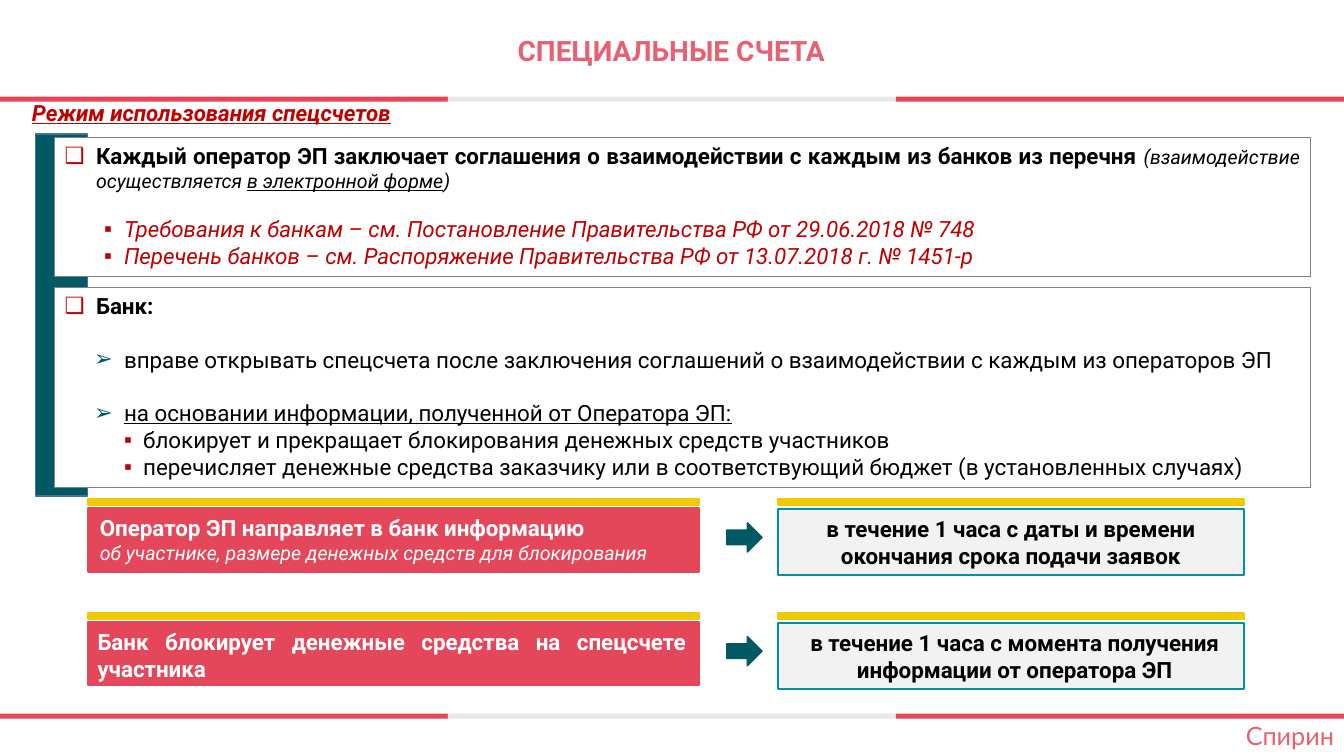
from lxml import etree
from pptx import Presentation
from pptx import util as u
from pptx.dml.color import RGBColor
from pptx.enum import shapes, text
from pptx.oxml import ns

RED = RGBColor(0xE4, 0x46, 0x5A)
ROSE = RGBColor(0xE8, 0x61, 0x72)
DARK_RED = RGBColor(0xC0, 0x00, 0x00)
TEAL = RGBColor(0x01, 0x5A, 0x63)
AQUA = RGBColor(0x02, 0x91, 0xA0)
BLUE = RGBColor(0x43, 0x73, 0x9E)
YELLOW = RGBColor(0xF1, 0xC9, 0x01)
GRAY = RGBColor(0x80, 0x80, 0x80)
SILVER = RGBColor(0xE9, 0xE8, 0xE9)
PALE = RGBColor(0xF2, 0xF2, 0xF2)
WHITE = RGBColor(0xFF, 0xFF, 0xFF)
BLACK = RGBColor(0x00, 0x00, 0x00)

ALIGN = text.PP_ALIGN
SHAPE = shapes.MSO_SHAPE


def write(para, words, size=16, color=BLACK, name="Roboto", bold=False, italic=False, underline=False):
    span = para.add_run()
    span.text = words
    font = span.font
    font.size, font.name = u.Pt(size), name
    font.bold, font.italic, font.underline = bold, italic, underline
    font.color.rgb = color


class Slide:
    def __init__(self, page):
        self.page = page

    def place(self, box, left, top, width, height):
        box.left, box.top = u.Pt(left), u.Pt(top)
        box.width, box.height = u.Pt(width), u.Pt(height)

    def paint(self, box, fill, line=None, weight=1):
        box.fill.solid()
        box.fill.fore_color.rgb = fill
        if line is None:
            box.line.fill.background()
        else:
            box.line.color.rgb = line
            box.line.width = u.Pt(weight)

    def shape(self, area, fill, line=None, weight=1, kind=SHAPE.RECTANGLE):
        box = self.page.shapes.add_shape(kind, *map(u.Pt, area))
        box.shadow.inherit = False
        self.paint(box, fill, line, weight)
        return box

    def fill_text(self, box, lines, align, insets=(7.2, 3.6, 7.2, 3.6), wrap=True):
        frame = box.text_frame
        frame.word_wrap = wrap
        frame.vertical_anchor = text.MSO_ANCHOR.TOP
        frame.margin_left, frame.margin_top, frame.margin_right, frame.margin_bottom = map(u.Pt, insets)
        for index, (words, style) in enumerate(lines):
            para = frame.add_paragraph() if index else frame.paragraphs[0]
            para.alignment = align
            write(para, words, **style)

    def label(self, area, words, align, **style):
        box = self.page.shapes.add_textbox(*map(u.Pt, area))
        self.fill_text(box, [(words, style)], align, wrap=False)

    def title(self, area, words, **style):
        box = self.page.shapes.title
        self.place(box, *area)
        para = box.text_frame.paragraphs[0]
        para.alignment, para.line_spacing = ALIGN.CENTER, 0.9
        write(para, words, **style)

    def bullet(self, para, mark, color, indent, hang):
        props = para._p.get_or_add_pPr()
        props.set("marL", str(u.Pt(indent)))
        props.set("indent", str(-u.Pt(hang)))
        tint = etree.SubElement(props, ns.qn("a:buClr"))
        etree.SubElement(tint, ns.qn("a:srgbClr"), val=str(color))
        etree.SubElement(props, ns.qn("a:buChar"), char=mark)

    def list(self, number, area, items):
        box = self.page.placeholders[number]
        self.page.shapes.element.append(box.element)
        self.place(box, *area)
        self.paint(box, WHITE, GRAY, 0.75)
        frame = box.text_frame
        frame.auto_size = text.MSO_AUTO_SIZE.NONE
        for index, (level, gap, spans) in enumerate(items):
            para = frame.add_paragraph() if index else frame.paragraphs[0]
            self.bullet(para, *level)
            para.alignment = ALIGN.JUSTIFY
            para.space_before, para.line_spacing = u.Pt(gap), 1.0
            for words, style in spans:
                write(para, words, **style)


def main():
    deck = Presentation()
    deck.slide_width, deck.slide_height = u.Pt(960), u.Pt(540)
    slide = Slide(deck.slides.add_slide(deck.slide_layouts[3]))

    for top in (69, 509.8):
        for column, color in enumerate((RED, SILVER, RED)):
            slide.shape((320 * column, top, 320, 3.6), color)

    slide.title((154, 10, 651, 55), "СПЕЦИАЛЬНЫЕ СЧЕТА", size=20, color=ROSE, bold=True)
    slide.label((15.8, 67, 288, 26.6), "Режим использования спецсчетов", ALIGN.JUSTIFY,
                color=DARK_RED, bold=True, italic=True, underline=True)
    slide.shape((25.2, 95.8, 37.4, 258.5), TEAL, BLUE)

    heading = ("❑", DARK_RED, 22.5, 22.5)
    reference = ("▪", DARK_RED, 42.5, 14.2)
    point = ("➢", TEAL, 42.5, 21.3)
    detail = ("▪", DARK_RED, 56.2, 13.7)
    bold = dict(bold=True)
    small = dict(size=14, italic=True)
    red = dict(color=DARK_RED, italic=True)

    slide.list(1, (38.9, 97.9, 897, 99.4), [
        (heading, 0, [
            ("Каждый оператор ЭП заключает соглашения о взаимодействии с каждым из банков из перечня ", bold),
            ("(взаимодействие осуществляется ", small),
            ("в электронной форме", dict(small, underline=True)),
            (")", small)]),
        (reference, 16.4, [("Требования к банкам – см. Постановление Правительства РФ от 29.06.2018 № 748", red)]),
        (reference, 0, [("Перечень банков – см. Распоряжение Правительства РФ от 13.07.2018 г. № 1451-р", red)]),
    ])
    slide.list(2, (38.9, 205.2, 897, 143.3), [
        (heading, 0, [("Банк:", bold)]),
        (point, 19, [("вправе открывать спецсчета после заключения соглашений о взаимодействии "
                      "с каждым из операторов ЭП", {})]),
        (point, 19, [("на основании информации, полученной от Оператора ЭП:", dict(underline=True))]),
        (detail, 0, [("блокирует и прекращает блокирования денежных средств участников", {})]),
        (detail, 0, [("перечисляет денежные средства заказчику или в соответствующий бюджет "
                      "(в установленных случаях)", {})]),
    ])

    white = dict(color=WHITE, bold=True)
    steps = [
        ([("Оператор ЭП направляет в банк информацию", white),
          ("об участнике, размере денежных средств для блокирования", dict(small, color=WHITE))], 8.7,
         [("в течение 1 часа с даты и времени", bold), ("окончания срока подачи заявок", bold)], 7.2),
        ([("Банк блокирует денежные средства на спецсчете участника", white)], 7.2,
         [("в течение 1 часа с момента получения информации от оператора ЭП", bold)], 12.6),
    ]
    for row, (action, action_inset, term, term_inset) in enumerate(steps):
        top = 356.4 + 81.3 * row
        slide.shape((519.1, top + 17, 25.2, 20.9), TEAL, TEAL, kind=SHAPE.RIGHT_ARROW)
        for left, width in ((62.6, 437), (555.8, 332.6)):
            slide.shape((left, top, width, 4.3), YELLOW, YELLOW, 1.5)
        card = slide.shape((62.6, top + 6.5, 437, 45.4), RED, RED, 1.5)
        slide.fill_text(card, action, ALIGN.JUSTIFY, (action_inset, 4.3, 9.4, 0))
        card = slide.shape((555.8, top + 7.4, 332.6, 46.8), PALE, AQUA, 1.5)
        slide.fill_text(card, term, ALIGN.CENTER, (term_inset, 4.3, 7.2, 0))

    slide.label((853, 511.2, 107, 28.8), "Спирин", ALIGN.RIGHT, size=18, color=ROSE, name="Lato")
    deck.save("out.pptx")


if __name__ == "__main__":
    main()
